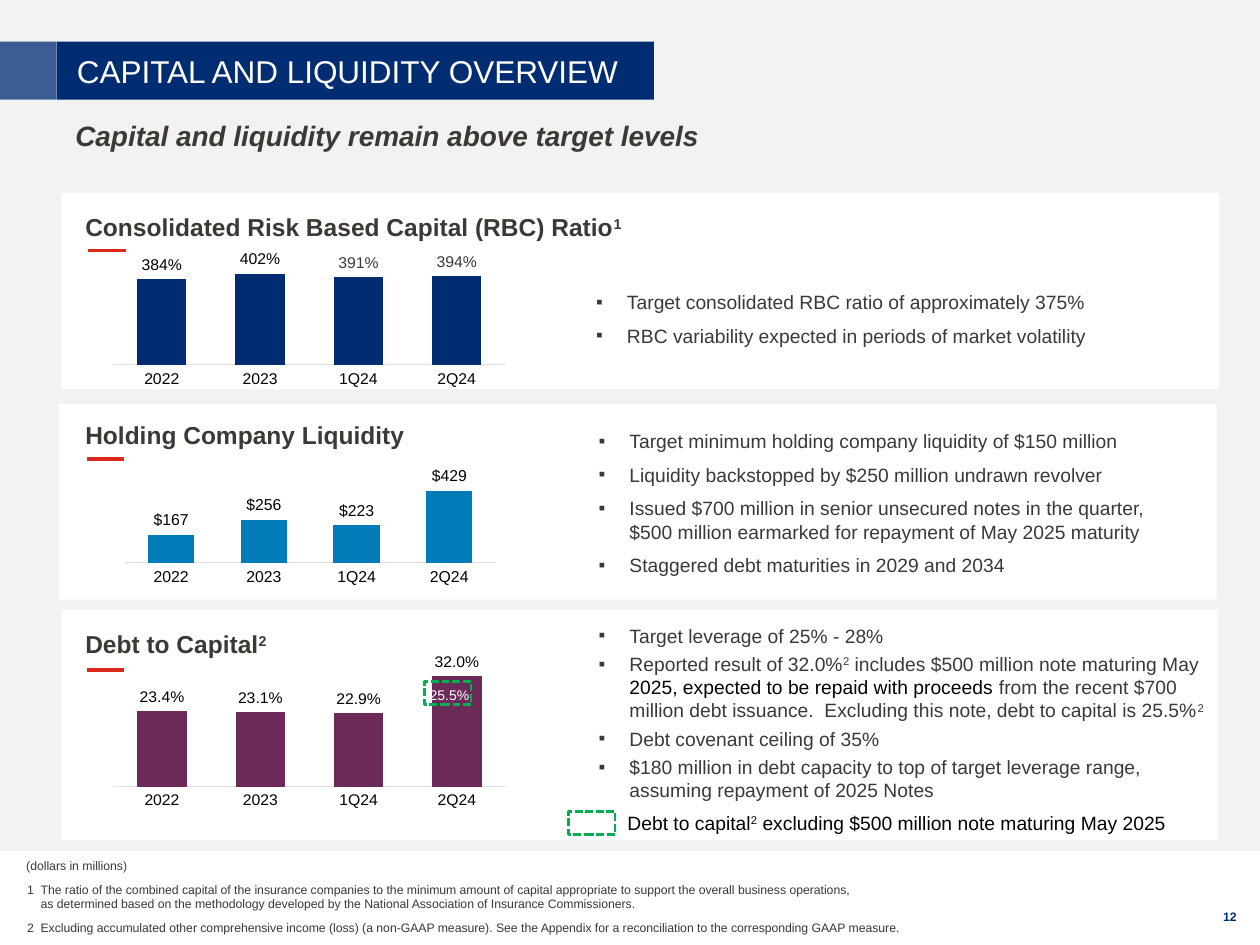
from lxml import etree
from pptx import Presentation
from pptx.chart.data import CategoryChartData
from pptx.dml.color import RGBColor
from pptx.enum.chart import XL_CHART_TYPE, XL_LABEL_POSITION, XL_TICK_MARK
from pptx.enum.dml import MSO_LINE
from pptx.enum.shapes import MSO_CONNECTOR, MSO_SHAPE
from pptx.enum.text import MSO_ANCHOR, PP_ALIGN
from pptx.oxml.ns import qn
from pptx.util import Cm, Pt

COLUMN = XL_CHART_TYPE.COLUMN_CLUSTERED
OUTSIDE = XL_LABEL_POSITION.OUTSIDE_END
NO_TICK = XL_TICK_MARK.NONE
DASH = MSO_LINE.SQUARE_DOT
RECT = MSO_SHAPE.RECTANGLE
STRAIGHT = MSO_CONNECTOR.STRAIGHT
TOP, MIDDLE, BOTTOM = MSO_ANCHOR.TOP, MSO_ANCHOR.MIDDLE, MSO_ANCHOR.BOTTOM
LEFT = PP_ALIGN.LEFT

FONT = "Arial"
NAVY = RGBColor(0x00, 0x2C, 0x71)
BLUE = RGBColor(0x00, 0x7D, 0xB8)
PLUM = RGBColor(0x6C, 0x2A, 0x58)
RED = RGBColor(0xDA, 0x28, 0x1C)
GREEN = RGBColor(0x00, 0xB0, 0x50)
INK = RGBColor(0x3C, 0x38, 0x34)
PAGE = RGBColor(0x00, 0x2E, 0x76)
PALE = RGBColor(0xF2, 0xF2, 0xF2)
RULE = RGBColor(0xE3, 0xE1, 0xDF)
BLACK = RGBColor(0, 0, 0)
WHITE = RGBColor(0xFF, 0xFF, 0xFF)

# Content: a text is a string or a list of strings and (string, style) pairs
TITLE = "CAPITAL AND LIQUIDITY OVERVIEW"
CLAIM = "Capital and liquidity remain above target levels"
TERMS = ["2022", "2023", "1Q24", "2Q24"]
TWO = ("2", "sup")

# Boxes are left, top, width, height in cm; plots are shares of the chart
PANELS = [
    dict(
        head=["Consolidated Risk Based Capital (RBC) Ratio", ("1", "sup")],
        box=(1.24, 3.89, 23.34, 3.96), head_y=4.17, rule=(1.78, 5.05),
        chart=(2.13, 5.05, 8.26, 2.84), plot=(0.017, 0.05, 0.96, 0.76),
        vals=[3.84, 4.02, 3.91, 3.94], span=(1, 4.5), form="0%",
        color=NAVY, soft=[2, 3],
        list=(11.25, 5.13, 12.93, 2.59), gaps=(6, 0),
        items=["Target consolidated RBC ratio of approximately 375%",
               "RBC variability expected in periods of market volatility"]),
    dict(
        head="Holding Company Liquidity",
        box=(1.19, 8.15, 23.34, 3.94), head_y=8.36, rule=(1.75, 9.25),
        chart=(2.13, 9.22, 8.26, 2.95), plot=(0.047, 0.204, 0.905, 0.516),
        vals=[167, 256, 223, 429], span=(0, 450), form='"$"#,##0',
        color=BLUE, soft=[],
        list=(11.3, 8.69, 12.93, 2.9), gaps=(3, 3),
        items=["Target minimum holding company liquidity of $150 million",
               "Liquidity backstopped by $250 million undrawn revolver",
               "Issued $700 million in senior unsecured notes in the quarter, "
               "$500 million earmarked for repayment of May 2025 maturity",
               "Staggered debt maturities in 2029 and 2034"]),
    dict(
        head=["Debt to Capital", TWO],
        box=(1.24, 12.29, 23.32, 4.65), head_y=12.57, rule=(1.75, 13.51),
        chart=(2.11, 13.16, 8.26, 3.23), plot=(0.02, 0.05, 0.96, 0.784),
        vals=[0.234, 0.231, 0.229, 0.32], span=(0.05, 0.35), form="0.0%",
        color=PLUM, soft=[],
        list=(11.3, 12.4, 13.41, 3.94), gaps=(0, 3),
        items=["Target leverage of 25% - 28%",
               ["Reported result of 32.0%", TWO,
                " includes $500 million note maturing May ",
                ("2025, expected to be repaid with proceeds ", "black"),
                "from the recent $700 million debt issuance.  Excluding this "
                "note, debt to capital is 25.5%", TWO],
               "Debt covenant ceiling of 35%",
               "$180 million in debt capacity to top of target leverage "
               "range, assuming repayment of 2025 Notes"]),
]
KEY = ["Debt to capital", TWO,
       " excluding $500 million note maturing May 2025"]
NOTES = [
    "1\tThe ratio of the combined capital of the insurance companies to the "
    "minimum amount of capital appropriate to support the overall business "
    "operations,\vas determined based on the methodology developed by the "
    "National Association of Insurance Commissioners.",
    "2\tExcluding accumulated other comprehensive income (loss) (a non-GAAP "
    "measure). See the Appendix for a reconciliation to the corresponding "
    "GAAP measure."]


def cms(box):
    return [Cm(n) for n in box]


def style(font, size, color, bold=False, italic=False):
    font.name, font.size = FONT, Pt(size)
    font.bold, font.italic = bold, italic
    font.color.rgb = color


def rect(box, fill=None, line=None):
    shape = slide.shapes.add_shape(RECT, *cms(box))
    shape.shadow.inherit = False
    if fill is None:
        shape.fill.background()
    else:
        shape.fill.solid()
        shape.fill.fore_color.rgb = fill
    if line is None:
        shape.line.fill.background()
    else:
        shape.line.color.rgb = line
        shape.line.width = Pt(1.5)
        shape.line.dash_style = DASH
    return shape


def hang(para, left, first, bullet=False):
    props = para._p.get_or_add_pPr()
    props.set("marL", str(Cm(left)))
    props.set("indent", str(Cm(first)))
    if bullet:
        tint = etree.SubElement(props, qn("a:buClr"))
        etree.SubElement(tint, qn("a:srgbClr"), val=str(INK))
        etree.SubElement(props, qn("a:buSzPct"), val="50000")
        etree.SubElement(props, qn("a:buFont"), typeface=FONT)
        etree.SubElement(props, qn("a:buChar"), char="■")


def write(para, text):
    if isinstance(text, str):
        para.text = text
        return
    for part in text:
        words, kind = (part, None) if isinstance(part, str) else part
        run = para.add_run()
        run.text = words
        if kind == "sup":
            run._r.get_or_add_rPr().set("baseline", "30000")
        elif kind == "black":
            run.font.color.rgb = BLACK


def label(box, texts, size, color, bold=False, italic=False, anchor=TOP,
          space=None, gaps=(0, 0), inset=None, dent=None, bullet=False):
    frame = slide.shapes.add_textbox(*cms(box)).text_frame
    frame.word_wrap = True
    frame.vertical_anchor = anchor
    if inset:
        frame.margin_top = frame.margin_bottom = Cm(inset)
    for i, text in enumerate(texts):
        para = frame.paragraphs[0] if i == 0 else frame.add_paragraph()
        write(para, text)
        if dent:
            hang(para, *dent, bullet)
        if i:
            para.space_before = Pt(gaps[0])
        para.space_after = Pt(gaps[1])
        para.line_spacing = space
        style(para.font, size, color, bold, italic)


def columns(panel):
    data = CategoryChartData(number_format=panel["form"])
    data.categories = TERMS
    data.add_series("Series 1", panel["vals"])
    chart = slide.shapes.add_chart(COLUMN, *cms(panel["chart"]), data).chart
    chart.has_legend = chart.has_title = False
    style(chart.font, 10, BLACK)
    base, scale = chart.category_axis, chart.value_axis
    base.major_tick_mark = NO_TICK
    base.format.line.color.rgb = RULE
    base.format.line.width = Pt(0.75)
    style(base.tick_labels.font, 9, BLACK)
    scale.visible = scale.has_major_gridlines = False
    scale.minimum_scale, scale.maximum_scale = panel["span"]
    plot = chart.plots[0]
    plot.gap_width = 100
    plot.vary_by_categories = False
    bars = plot.series[0]
    bars.format.fill.solid()
    bars.format.fill.fore_color.rgb = panel["color"]
    tags = bars.data_labels
    tags.show_value = True
    tags.position = OUTSIDE
    tags.number_format, tags.number_format_is_linked = panel["form"], False
    style(tags.font, 9, BLACK)
    for i in panel["soft"]:
        tag = bars.points[i].data_label
        style(tag.font, 9, INK)
        tag.position = OUTSIDE
    # Fixed inner plot area
    area = chart._chartSpace.chart.plotArea
    for old in area.findall(qn("c:layout")):
        area.remove(old)
    layout = etree.Element(qn("c:layout"))
    area.insert(0, layout)
    hand = etree.SubElement(layout, qn("c:manualLayout"))
    etree.SubElement(hand, qn("c:layoutTarget"), val="inner")
    for name in ("xMode", "yMode"):
        etree.SubElement(hand, qn("c:" + name), val="edge")
    for name, share in zip("xywh", panel["plot"]):
        etree.SubElement(hand, qn("c:" + name), val=str(share))


deck = Presentation()
deck.slide_width, deck.slide_height = Cm(25.4), Cm(19.05)
slide = deck.slides.add_slide(deck.slide_layouts[5])
slide.background.fill.solid()
slide.background.fill.fore_color.rgb = PALE

# Title banner
title = slide.shapes.title
title.left, title.top, title.width, title.height = cms((1.14, 0.84, 12.04, 1.17))
title.fill.solid()
title.fill.fore_color.rgb = NAVY
frame = title.text_frame
frame.word_wrap = True
frame.vertical_anchor = TOP
frame.margin_left, frame.margin_top = Cm(0.41), Cm(0.3)
frame.margin_bottom = 0
head = frame.paragraphs[0]
head.text = TITLE
head.alignment = LEFT
head.line_spacing = 0.9
style(head.font, 18, WHITE)
band = rect((0, 0.84, 1.14, 1.17), NAVY)
tone = band._element.spPr.find(qn("a:solidFill"))[0]
etree.SubElement(tone, qn("a:alpha"), val="75000")
label((1.27, 2.34, 23.8, 0.86), [CLAIM], 16, INK, True, True, space=0.9)

# Panels: heading, red rule, chart and bullets
for panel in PANELS:
    rect(panel["box"], WHITE)
    label((1.47, panel["head_y"], 22.94, 0.89), [panel["head"]], 14, INK,
          True, anchor=MIDDLE, space=0.9)
    columns(panel)
    x, y = panel["rule"]
    rule = slide.shapes.add_connector(STRAIGHT, *cms((x, y, x + 0.76, y)))
    rule.line.color.rgb = RED
    rule.line.width = Pt(2)
    etree.SubElement(rule._element.spPr, qn("a:effectLst"))
    label(panel["list"], panel["items"], 11, INK, anchor=MIDDLE,
          gaps=panel["gaps"], inset=0.25, dent=(1.14, -0.61), bullet=True)

# Dashed marker on the last column and its key
for x, y in [(8.56, 13.74), (11.46, 16.36)]:
    rect((x, y, 0.94, 0.46), line=GREEN)
label((8.41, 13.72, 1.45, 0.48), ["25.5%"], 8, WHITE)
label((12.4, 16.23, 12.4, 0.74), [KEY], 11, BLACK)

# Footer
rect((0, 17.15, 25.4, 1.9), WHITE)
label((0.28, 17.17, 4.06, 0.56), ["(dollars in millions)"], 7, INK)
label((0, 17.65, 19.35, 1.32), NOTES, 7, INK, anchor=BOTTOM, gaps=(2, 3),
      dent=(0.57, -0.27))
label((24.41, 18.21, 0.99, 0.56), ["12"], 7, PAGE, True)

deck.save("out.pptx")
